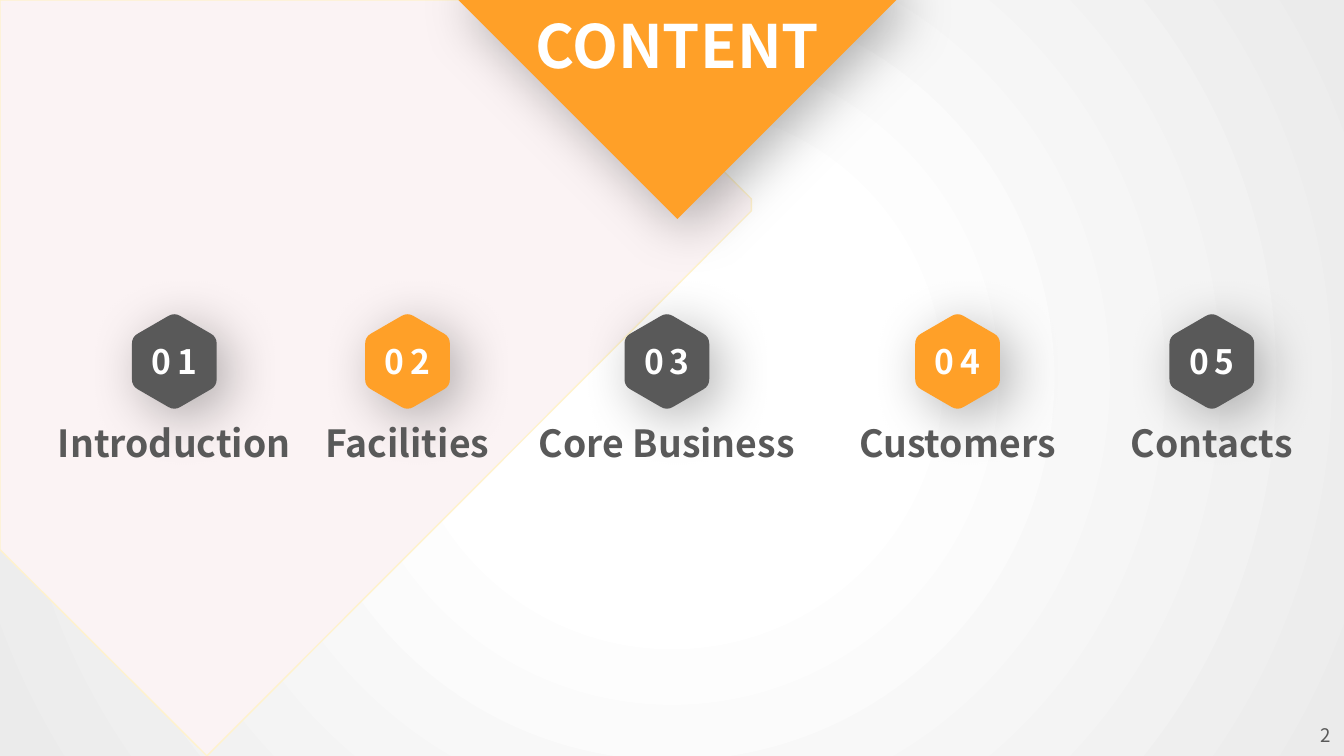
import math

from pptx import Presentation
from pptx import util as u
from pptx.dml.color import RGBColor
from pptx.enum import text
from pptx.oxml import parse_xml
from pptx.oxml.ns import nsdecls, qn

ORANGE = RGBColor(0xFF, 0xA0, 0x28)
GREY = RGBColor(0x59, 0x59, 0x59)
WHITE = RGBColor(0xFF, 0xFF, 0xFF)
BLUSH = RGBColor(0xFB, 0xF3, 0xF4)
CREAM = RGBColor(0xFF, 0xF2, 0xCC)
SILVER = RGBColor(0xEB, 0xEB, 0xEB)

FONT = "Noto Sans CJK SC"
COLS, ROWS = 100, 56.25
ITEMS = [
    ("Introduction", 12.97),
    ("Facilities", 30.32),
    ("Core Business", 49.62),
    ("Customers", 71.25),
    ("Contacts", 90.17),
]


class Deck:
    def __init__(self):
        self.prs = Presentation()
        self.prs.slide_width = u.Inches(10)
        self.prs.slide_height = u.Inches(5.625)
        self.s = self.prs.slides.add_slide(self.prs.slide_layouts[5])

    def x(self, col):
        return round(self.prs.slide_width * col / COLS)

    def y(self, row):
        return round(self.prs.slide_height * row / ROWS)

    def background(self, inner, outer):
        bg = parse_xml(
            f'<p:bg {nsdecls("p", "a")}><p:bgPr><a:gradFill rotWithShape="1"><a:gsLst>'
            f'<a:gs pos="28000"><a:srgbClr val="{inner}"/></a:gs>'
            f'<a:gs pos="100000"><a:srgbClr val="{outer}"/></a:gs></a:gsLst>'
            '<a:path path="circle"><a:fillToRect l="50000" t="50000" r="50000" b="50000"/></a:path>'
            '</a:gradFill><a:effectLst/></p:bgPr></p:bg>')
        self.s.element.find(qn("p:cSld")).insert(0, bg)

    def polygon(self, points, fill, line=None, shadow=False):
        pts = [(self.x(col), self.y(row)) for col, row in points]
        builder = self.s.shapes.build_freeform(*pts[0], scale=1.0)
        builder.add_line_segments(pts[1:], close=True)
        sp = builder.convert_to_shape()
        sp.fill.solid()
        sp.fill.fore_color.rgb = fill
        if line is None:
            sp.line.fill.background()
        else:
            sp.line.color.rgb = line
            sp.line.width = u.Pt(0.75)
        sp.shadow.inherit = False
        if shadow:
            sp.element.spPr.find(qn("a:effectLst")).append(parse_xml(
                f'<a:outerShdw {nsdecls("a")} blurRad="{u.Pt(30)}" dist="{u.Pt(8)}" '
                'dir="2700000" algn="tl" rotWithShape="0"><a:srgbClr val="000000">'
                '<a:alpha val="30000"/></a:srgbClr></a:outerShdw>'))

    def hexagon(self, col, row, radius, trim, fill):
        angles = [math.radians(60 * i - 90) for i in range(6)]
        corners = [(col + radius * math.cos(a), row + radius * math.sin(a)) for a in angles]
        points = []
        for i, corner in enumerate(corners):
            before, after = corners[i - 1], corners[(i + 1) % 6]
            for t in (0, 0.25, 0.5, 0.75, 1):
                back, ahead = (1 - t) ** 2 * trim / radius, t ** 2 * trim / radius
                points.append(tuple(c + back * (b - c) + ahead * (a - c)
                                    for c, b, a in zip(corner, before, after)))
        self.polygon(points, fill, shadow=True)

    def style(self, sp, at, words, size, color, bold=True, align=text.PP_ALIGN.CENTER,
              anchor=text.MSO_ANCHOR.TOP, wrap=True, spacing=0):
        col, row, width, height = at
        sp.left, sp.top = self.x(col), self.y(row)
        sp.width, sp.height = self.x(width), self.y(height)
        tf = sp.text_frame
        tf.text = words
        tf.auto_size = text.MSO_AUTO_SIZE.NONE
        tf.word_wrap = wrap
        tf.vertical_anchor = anchor
        tf.margin_top = tf.margin_bottom = 0
        p = tf.paragraphs[0]
        p.alignment = align
        r = p.runs[0]
        r.font.name, r.font.size, r.font.bold = FONT, u.Pt(size), bold
        r.font.color.rgb = color
        if spacing:
            p.font.size = u.Pt(size)
            for rPr in p.runs[0].font.color and sp.element.iter(qn("a:rPr")):
                rPr.set("spc", str(spacing * 100))

    def label(self, at, words, size, color, **options):
        self.style(self.s.shapes.add_textbox(0, 0, 0, 0), at, words, size, color, **options)

    def title(self, at, words, size, color):
        sp = self.s.shapes.title
        sp.element.getparent().append(sp.element)
        self.style(sp, at, words, size, color, anchor=text.MSO_ANCHOR.BOTTOM, wrap=False)


def main():
    d = Deck()
    d.background(WHITE, SILVER)
    d.polygon([(41.1, 0), (0, 0), (0, 40.9), (15.4, 56.25), (55.9, 15.7), (55.9, 14.8)],
              BLUSH, line=CREAM)
    d.polygon([(50.4, 16.3), (34, -0.1), (50.4, -16.5), (66.8, -0.1)], ORANGE, shadow=True)
    d.title((38.4, -1, 24, 7), "CONTENT", 32, WHITE)
    for i, (name, col) in enumerate(ITEMS):
        d.hexagon(col, 26.9, 3.64, 0.5, ORANGE if i % 2 else GREY)
        d.label((col - 3.15, 25.4, 6.3, 3), f"{i + 1:02}", 18, WHITE, wrap=False, spacing=3)
        d.label((col - 7.85, 31.3, 15.7, 4.7), name, 20, GREY, wrap=False)
    d.label((84.8, 53.2, 15.2, 3.05), "2", 10, GREY, bold=False,
            align=text.PP_ALIGN.RIGHT, anchor=text.MSO_ANCHOR.MIDDLE)
    d.prs.save("out.pptx")


if __name__ == "__main__":
    main()
